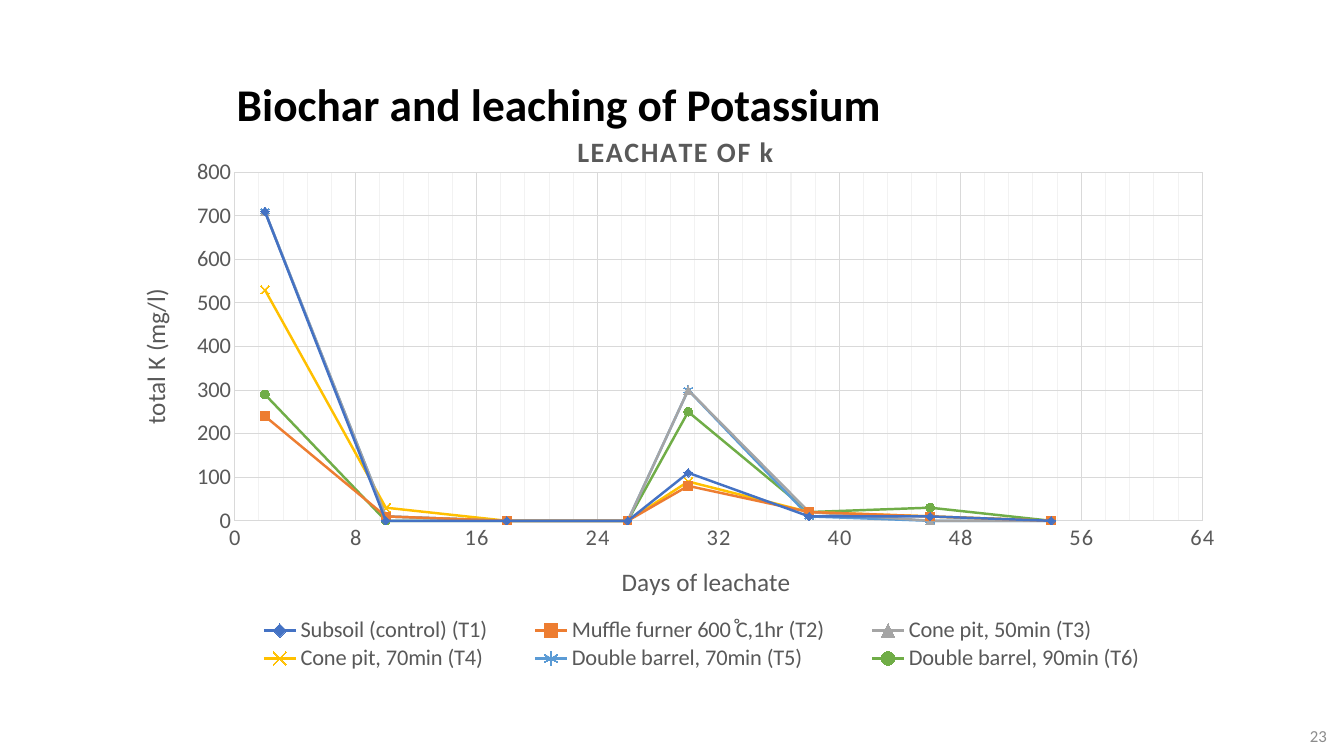
from dataclasses import dataclass

from lxml import etree
from pptx import Presentation
from pptx.chart.data import XyChartData
from pptx.dml.color import RGBColor
from pptx.enum.chart import XL_CHART_TYPE, XL_LEGEND_POSITION, XL_MARKER_STYLE, XL_TICK_MARK
from pptx.enum.text import MSO_ANCHOR, PP_ALIGN
from pptx.oxml import parse_xml
from pptx.oxml.ns import nsdecls, qn
from pptx.util import Inches, Pt

SCATTER = XL_CHART_TYPE.XY_SCATTER_LINES
LEGEND_TOP = XL_LEGEND_POSITION.TOP
NO_TICK = XL_TICK_MARK.NONE
DIAMOND = XL_MARKER_STYLE.DIAMOND
SQUARE = XL_MARKER_STYLE.SQUARE
TRIANGLE = XL_MARKER_STYLE.TRIANGLE
CROSS = XL_MARKER_STYLE.X
STAR = XL_MARKER_STYLE.STAR
CIRCLE = XL_MARKER_STYLE.CIRCLE
OPEN_MARKERS = (CROSS, STAR)
BOTTOM = MSO_ANCHOR.BOTTOM
MIDDLE = MSO_ANCHOR.MIDDLE
LEFT = PP_ALIGN.LEFT
RIGHT = PP_ALIGN.RIGHT

DAYS = (2, 10, 18, 26, 30, 38, 46, 54)
TREATMENTS = (
    ("Subsoil (control) (T1)", "4472C4", DIAMOND, (710, 0, 0, 0, 110, 10, 10, 0)),
    ("Muffle furner 600 ̊C,1hr (T2)", "ED7D31", SQUARE, (240, 10, 0, 0, 80, 20, 10, 0)),
    ("Cone pit, 50min (T3)", "A5A5A5", TRIANGLE, (710, 10, 0, 0, 300, 20, 0, 0)),
    ("Cone pit, 70min (T4)", "FFC000", CROSS, (530, 30, 0, 0, 90, 20, 10, 0)),
    ("Double barrel, 70min (T5)", "5B9BD5", STAR, (710, 10, 0, 0, 300, 10, 0, 0)),
    ("Double barrel, 90min (T6)", "70AD47", CIRCLE, (290, 0, 0, 0, 250, 20, 30, 0)),
)


@dataclass(frozen=True)
class Theme:
    font: str = "Calibri"
    ink: str = "000000"
    chart_ink: str = "595959"
    number_ink: str = "8C8C8C"
    grid: str = "D9D9D9"
    minor_grid: str = "F2F2F2"
    heading_size: float = 32.4
    chart_title_size: int = 20
    axis_title_size: int = 18
    label_size: int = 16
    number_size: int = 12
    grid_width: float = 0.75
    series_width: float = 1.75
    marker_size: int = 6
    letter_spacing: int = 100


class SlideBuilder:
    def __init__(self, slide, theme):
        self.slide = slide
        self.theme = theme

    def style_font(self, font, size, color, bold=False):
        font.name = self.theme.font
        font.size = Pt(size)
        font.bold = bold
        font.color.rgb = RGBColor.from_string(color)

    def style_line(self, line, color, width):
        line.color.rgb = RGBColor.from_string(color)
        line.width = Pt(width)

    def text(self, box, content, size, color, anchor, align, bold=False):
        shape = self.slide.shapes.add_textbox(*map(Inches, box))
        frame = shape.text_frame
        frame.word_wrap = True
        frame.vertical_anchor = anchor
        frame.margin_bottom = Inches(0.04)
        paragraph = frame.paragraphs[0]
        paragraph.alignment = align
        run = paragraph.add_run()
        run.text = content
        self.style_font(run.font, size, color, bold)

    def place(self, element, index, x, y, width=None, height=None, inner=False):
        for old in element.findall(qn("c:layout")):
            element.remove(old)
        layout = parse_xml(f"<c:layout {nsdecls('c')}><c:manualLayout/></c:layout>")
        settings = [("layoutTarget", "inner")] if inner else []
        settings += [("xMode", "edge"), ("yMode", "edge"), ("x", x), ("y", y)]
        if width is not None:
            settings += [("w", width), ("h", height)]
        for tag, value in settings:
            etree.SubElement(layout[0], qn(f"c:{tag}")).set("val", str(value))
        element.insert(index, layout)

    def chart_label(self, title, content, size, x, y, bold=False):
        frame = title.text_frame
        run = frame.paragraphs[0].add_run()
        run.text = content
        self.style_font(run.font, size, self.theme.chart_ink, bold)
        self.place(title._element, 1, x, y)
        return frame, run

    def axis(self, axis, maximum, major):
        theme = self.theme
        axis.minimum_scale = 0
        axis.maximum_scale = maximum
        axis.major_unit = major
        axis.major_tick_mark = NO_TICK
        axis.minor_tick_mark = NO_TICK
        axis.has_major_gridlines = True
        for line in (axis.format.line, axis.major_gridlines.format.line):
            self.style_line(line, theme.grid, theme.grid_width)
        self.style_font(axis.tick_labels.font, theme.label_size, theme.chart_ink)

    def minor_grid(self, axis, unit):
        axis.minor_unit = unit
        axis.has_minor_gridlines = True
        gridlines = axis._element.find(qn("c:minorGridlines"))
        gridlines.append(parse_xml(
            f"<c:spPr {nsdecls('c', 'a')}><a:ln w=\"{Pt(self.theme.grid_width)}\"><a:solidFill>"
            f"<a:srgbClr val=\"{self.theme.minor_grid}\"/></a:solidFill></a:ln></c:spPr>"
        ))

    def series(self, series, color, marker_style):
        theme = self.theme
        series.smooth = False
        self.style_line(series.format.line, color, theme.series_width)
        marker = series.marker
        marker.style = marker_style
        marker.size = theme.marker_size
        self.style_line(marker.format.line, color, theme.grid_width)
        if marker_style in OPEN_MARKERS:
            marker.format.fill.background()
        else:
            marker.format.fill.solid()
            marker.format.fill.fore_color.rgb = RGBColor.from_string(color)

    def leachate_chart(self, box):
        theme = self.theme
        data = XyChartData()
        for name, _, _, amounts in TREATMENTS:
            points = data.add_series(name)
            for day, amount in zip(DAYS, amounts):
                points.add_data_point(day, amount)
        chart = self.slide.shapes.add_chart(SCATTER, *map(Inches, box), data).chart
        self.style_font(chart.font, theme.label_size, theme.chart_ink)
        plot = chart.plots[0]
        plot.vary_by_categories = False
        for series, (_, color, marker_style, _) in zip(plot.series, TREATMENTS):
            self.series(series, color, marker_style)

        days, potassium = chart.category_axis, chart.value_axis
        self.axis(days, 64, 8)
        self.minor_grid(days, 1.6)
        self.axis(potassium, 800, 100)
        for properties in days._element.xpath("c:txPr//a:defRPr"):
            properties.set("spc", str(theme.letter_spacing))

        chart.has_title = True
        _, run = self.chart_label(
            chart.chart_title, "LEACHATE OF k", theme.chart_title_size, 0.41, 0.02, True)
        run.font._element.set("spc", str(theme.letter_spacing))
        self.chart_label(days.axis_title, "Days of leachate", theme.axis_title_size, 0.45, 0.79)
        frame, _ = self.chart_label(
            potassium.axis_title, "total K (mg/l)", theme.axis_title_size, 0.02, 0.3)
        body = frame._txBody.find(qn("a:bodyPr"))
        body.set("rot", "-5400000")
        body.set("vert", "horz")

        chart.has_legend = True
        legend = chart.legend
        legend.position = LEGEND_TOP
        legend.include_in_layout = False
        self.style_font(legend.font, theme.label_size, theme.chart_ink)
        self.place(legend._element, 1, 0.1, 0.89, 0.85, 0.1)
        self.place(chart._chartSpace.chart.plotArea, 0, 0.11, 0.1, 0.86, 0.62, inner=True)


def main():
    presentation = Presentation()
    presentation.slide_width = Inches(13.33)
    presentation.slide_height = Inches(7.5)
    slide = presentation.slides.add_slide(presentation.slide_layouts[6])
    theme = Theme()
    builder = SlideBuilder(slide, theme)
    builder.text((2.25, 0.4, 10.17, 0.94), "Biochar and leaching of Potassium",
                 theme.heading_size, theme.ink, BOTTOM, LEFT, bold=True)
    builder.leachate_chart((1.1, 1.15, 11.16, 5.58))
    builder.text((10.26, 7.1, 3, 0.4), "23", theme.number_size, theme.number_ink, MIDDLE, RIGHT)
    presentation.save("out.pptx")


if __name__ == "__main__":
    main()
